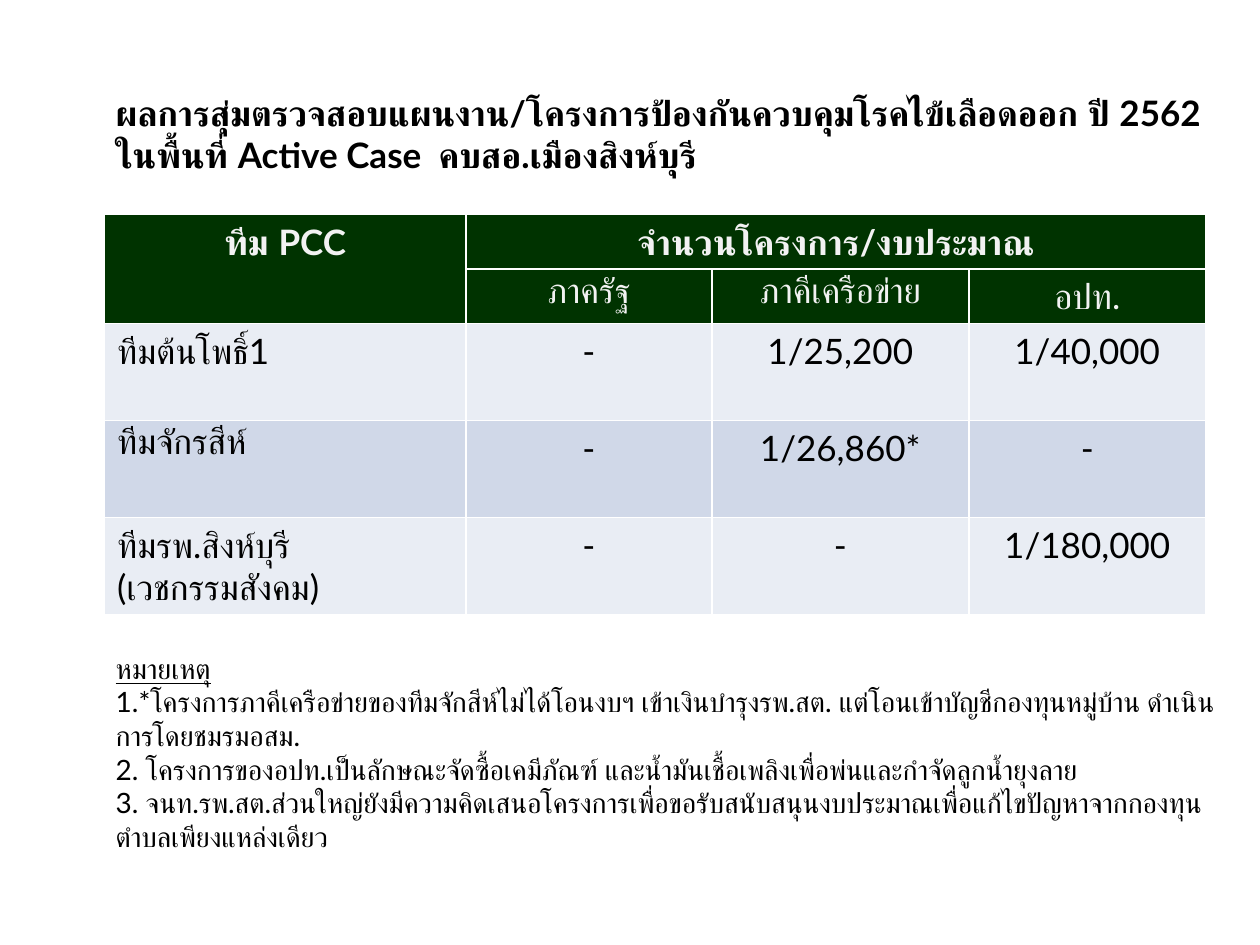
from pptx import Presentation
from pptx.dml.color import RGBColor
from pptx.enum.text import PP_ALIGN
from pptx.util import Inches, Pt

LEFT, CENTER = PP_ALIGN.LEFT, PP_ALIGN.CENTER
FONT = "Lato"
COLORS = {
    "text": "000000",
    "header_text": "F2F2F2",
    "header": "003300",
    "light_row": "E9EDF4",
    "dark_row": "D0D8E8",
}
MARGIN = 0.82
COLUMN_WIDTHS = [2.87, 1.95, 2.04, 1.88]
ROW_HEIGHTS = [0.43] * 2 + [0.77] * 3
HEADER_ROWS = 2

TITLE = ("ผลการสุ่มตรวจสอบแผนงาน/โครงการป้องกันควบคุมโรคไข้เลือดออก ปี 2562 "
         "ในพื้นที่ Active Case  คบสอ.เมืองสิงห์บุรี")
ROWS = [
    ["ทีม PCC", "จำนวนโครงการ/งบประมาณ", "", ""],
    ["", "ภาครัฐ", "ภาคีเครือข่าย", "อปท."],
    ["ทีมต้นโพธิ์1", "-", "1/25,200", "1/40,000"],
    ["ทีมจักรสีห์", "-", "1/26,860*", "-"],
    ["ทีมรพ.สิงห์บุรี\n(เวชกรรมสังคม)", "-", "-", "1/180,000"],
]
NOTES = [
    "หมายเหตุ",
    "1.*โครงการภาคีเครือข่ายของทีมจักสีห์ไม่ได้โอนงบฯ เข้าเงินบำรุงรพ.สต. "
    "แต่โอนเข้าบัญชีกองทุนหมู่บ้าน ดำเนินการโดยชมรมอสม.",
    "2. โครงการของอปท.เป็นลักษณะจัดซื้อเคมีภัณฑ์ และน้ำมันเชื้อเพลิงเพื่อพ่นและกำจัดลูกน้ำยุงลาย",
    "3. จนท.รพ.สต.ส่วนใหญ่ยังมีความคิดเสนอโครงการเพื่อขอรับสนับสนุนงบประมาณ"
    "เพื่อแก้ไขปัญหาจากกองทุนตำบลเพียงแหล่งเดียว",
]


def write_text(frame, text, size, color="text", bold=False, align=LEFT):
    """Fill a text frame, one paragraph per line, in a single style."""
    frame.word_wrap = True
    frame.text = text
    for para in frame.paragraphs:
        para.alignment = align
        para.font.name = FONT
        para.font.size = Pt(size)
        para.font.bold = bold
        para.font.color.rgb = RGBColor.from_string(COLORS[color])


deck = Presentation()
deck.slide_width, deck.slide_height = Inches(10), Inches(7.5)
page = deck.slides.add_slide(deck.slide_layouts[6])

title = page.shapes.add_textbox(Inches(MARGIN), Inches(0.68), Inches(8.98), Inches(0.77))
write_text(title.text_frame, TITLE, 20, bold=True)

table = page.shapes.add_table(
    len(ROW_HEIGHTS), len(COLUMN_WIDTHS), Inches(0.83), Inches(1.7),
    Inches(sum(COLUMN_WIDTHS)), Inches(sum(ROW_HEIGHTS))).table
for column, width in zip(table.columns, COLUMN_WIDTHS):
    column.width = Inches(width)
for row, height in zip(table.rows, ROW_HEIGHTS):
    row.height = Inches(height)
table.cell(0, 0).merge(table.cell(1, 0))
table.cell(0, 1).merge(table.cell(0, 3))

for row_index, texts in enumerate(ROWS):
    is_header = row_index < HEADER_ROWS
    band = "dark_row" if row_index % 2 else "light_row"
    for column_index, text in enumerate(texts):
        cell = table.cell(row_index, column_index)
        cell.fill.solid()
        cell.fill.fore_color.rgb = RGBColor.from_string(COLORS["header" if is_header else band])
        write_text(cell.text_frame, text, 20,
                   color="header_text" if is_header else "text",
                   bold=row_index == 0,
                   align=CENTER if is_header or column_index else LEFT)

notes = page.shapes.add_textbox(Inches(MARGIN), Inches(5.12), Inches(10 - MARGIN), Inches(1.72))
write_text(notes.text_frame, "\n".join(NOTES), 16)
notes.text_frame.paragraphs[0].runs[0].font.underline = True

deck.save("out.pptx")
